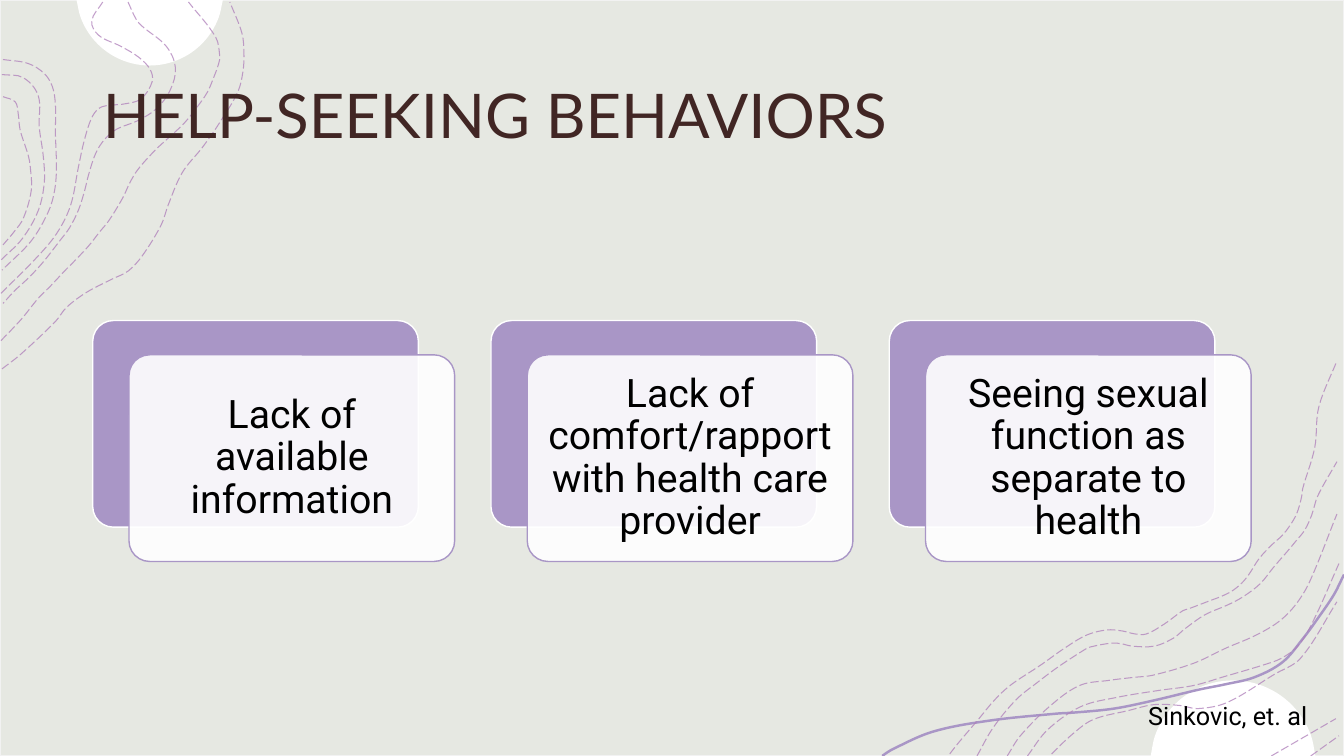
from dataclasses import dataclass
from math import acos, cos, sin

from lxml.etree import SubElement
from pptx import Presentation
from pptx.dml.color import RGBColor
from pptx.enum.dml import MSO_LINE
from pptx.enum.shapes import MSO_SHAPE
from pptx.enum.text import MSO_ANCHOR, PP_ALIGN
from pptx.oxml.ns import qn
from pptx.util import Pt

PX = 9144  # EMU per px, 100 px to the inch
WIDTH, HEIGHT = 1333, 750


@dataclass(frozen=True)
class Theme:
    background: str = "E6E8E2"
    border: str = "F2F2F2"
    white: str = "FFFFFF"
    purple: str = "A996C6"
    contour: str = "AF7FBA"
    heading: str = "412624"
    text: str = "000000"
    heading_font: str = "Lato"
    text_font: str = "Roboto"
    heading_size: int = 44
    card_size: int = 28
    citation_size: int = 18


class SlideBuilder:
    def __init__(self, s, theme):
        self.s = s
        self.theme = theme

    def paint(self, color_format, color, alpha=100):
        """Set a solid colour, with its opacity in percent."""
        color_format.rgb = RGBColor.from_string(color)
        if alpha < 100:
            for clr in color_format._xFill.iter(qn("a:srgbClr")):
                SubElement(clr, qn("a:alpha")).set("val", str(alpha * 1000))

    def style(self, sp, fill=None, line=None, width=1, fill_alpha=100, line_alpha=100):
        sp.shadow.inherit = False
        if fill:
            sp.fill.solid()
            self.paint(sp.fill.fore_color, fill, fill_alpha)
        else:
            sp.fill.background()
        if line:
            sp.line.fill.solid()
            self.paint(sp.line.fill.fore_color, line, line_alpha)
            sp.line.width = Pt(width)
        else:
            sp.line.fill.background()

    def box(self, kind, x, y, w, h, **style):
        sp = self.s.shapes.add_shape(kind, x * PX, y * PX, w * PX, h * PX)
        self.style(sp, **style)
        return sp

    def put_text(self, sp, text, frame, paragraph, font, color):
        tf = sp.text_frame
        p = tf.paragraphs[0]
        r = p.add_run()
        r.text = text
        for target, values in ((tf, frame), (p, paragraph), (r.font, font)):
            for name, value in values.items():
                setattr(target, name, value)
        r.font.color.rgb = RGBColor.from_string(color)

    def curve(self, points, closed=False, **style):
        """Draw a smooth Bezier curve through the points."""
        start, *rest = [(round(x * PX), round(y * PX)) for x, y in points]
        builder = self.s.shapes.build_freeform(*start)
        builder.add_line_segments(rest, close=closed)
        sp = builder.convert_to_shape()
        knots = [complex(int(pt.get("x")), int(pt.get("y")))
                 for pt in sp._element.iter(qn("a:pt"))]
        last = len(knots) - 1
        tangents = []
        for i in range(last + 1):
            step = knots[min(i + 1, last)] - knots[max(i - 1, 0)]
            tangents.append(step / abs(step))
        for i, segment in enumerate(list(sp._element.iter(qn("a:lnTo")))):
            a, b = knots[i], knots[i + 1]
            reach = abs(b - a) / 3
            segment.tag = qn("a:cubicBezTo")
            for child in list(segment):
                segment.remove(child)
            for z in (a + tangents[i] * reach, b - tangents[i + 1] * reach, b):
                pt = SubElement(segment, qn("a:pt"))
                pt.set("x", str(round(z.real)))
                pt.set("y", str(round(z.imag)))
        self.style(sp, **style)
        return sp

    def contour(self, points):
        sp = self.curve(points, line=self.theme.contour, width=0.75, line_alpha=75)
        sp.line.dash_style = MSO_LINE.LONG_DASH

    def cap(self, cx, cy, radius, edge, side):
        """Draw the part of a circle inside the slide edge; side is 1 below it, -1 above."""
        half = acos((edge - cy) * side / radius)
        angles = [half * i / 6 for i in range(-6, 7)]
        self.curve([(cx + radius * sin(a), cy + side * radius * cos(a)) for a in angles],
                   closed=True, fill=self.theme.white)

    def title(self, text, x, y, w, h):
        t, sp = self.theme, self.s.shapes.title
        self.s.shapes._spTree.append(sp._element)  # in front of the decoration
        for name, value in dict(left=x, top=y, width=w, height=h).items():
            setattr(sp, name, value * PX)
        self.put_text(sp, text, dict(vertical_anchor=MSO_ANCHOR.MIDDLE, word_wrap=True),
                      dict(alignment=PP_ALIGN.LEFT),
                      dict(name=t.heading_font, size=Pt(t.heading_size)), t.heading)

    def card(self, text, x, y, w, h):
        t = self.theme
        back = self.box(MSO_SHAPE.ROUNDED_RECTANGLE, x, y, w, h,
                        fill=t.purple, line=t.white)
        front = self.box(MSO_SHAPE.ROUNDED_RECTANGLE, x + 36, y + 34, w, h,
                         fill=t.white, fill_alpha=90, line=t.purple)
        for sp in (back, front):
            sp.adjustments[0] = 0.1
        frame = {f"margin_{side}": 12 * PX for side in ("left", "top", "right", "bottom")}
        frame.update(vertical_anchor=MSO_ANCHOR.MIDDLE, word_wrap=True)
        self.put_text(front, text, frame,
                      dict(alignment=PP_ALIGN.CENTER, line_spacing=0.9),
                      dict(name=t.text_font, size=Pt(t.card_size)), t.text)

    def citation(self, text, x, y, w, h):
        t = self.theme
        sp = self.s.shapes.add_textbox(x * PX, y * PX, w * PX, h * PX)
        self.put_text(sp, text, dict(word_wrap=True), {},
                      dict(name=t.text_font, size=Pt(t.citation_size)), t.text)


RIBBON = [(875, 750), (884, 744), (925, 726), (981, 715), (1048, 708), (1065, 707),
          (1105, 703), (1144, 695), (1190, 684), (1215, 679), (1244, 672), (1272, 657),
          (1292, 634), (1306, 615), (1323, 590), (1333, 570)]

TOP_LEFT_CONTOURS = [
    [(2, 366), (20, 352), (55, 319), (66, 305), (86, 290), (111, 277), (127, 269),
     (141, 254), (160, 223), (167, 203), (181, 171), (201, 146), (219, 120), (236, 91),
     (241, 71), (242, 53), (240, 33), (228, 2)],
    [(1, 338), (21, 317), (38, 296), (50, 284), (64, 269), (73, 260), (88, 244),
     (99, 230), (108, 219), (122, 196), (129, 181), (137, 168), (154, 149), (167, 137),
     (183, 122), (198, 103), (206, 91), (212, 77), (217, 63), (218, 56), (214, 37),
     (187, 2)],
    [(127, 2), (135, 19), (141, 26), (165, 46), (174, 67), (169, 89), (155, 108),
     (136, 120), (116, 128), (104, 138), (95, 152), (88, 173), (84, 189), (78, 208),
     (69, 226), (60, 238), (42, 261), (28, 276), (15, 288), (3, 301)],
    [(1, 291), (35, 257), (56, 232), (70, 204), (78, 165), (84, 138), (92, 115),
     (101, 106), (124, 103), (140, 98), (151, 81), (149, 69), (138, 57), (120, 46),
     (98, 35), (91, 21), (102, 2)],
    [(3, 59), (28, 63), (44, 73), (52, 86), (55, 104), (55, 132), (56, 168), (54, 190),
     (48, 210), (31, 239), (2, 268)],
    [(2, 74), (23, 77), (38, 95), (39, 126), (43, 155), (44, 181), (38, 209), (22, 237),
     (1, 258)],
    [(3, 96), (15, 101), (18, 112), (20, 129), (28, 154), (30, 165), (31, 189),
     (23, 217), (14, 230), (3, 243)],
]

BOTTOM_RIGHT_CONTOURS = [
    [(942, 748), (949, 739), (971, 713), (986, 695), (1002, 680), (1032, 660),
     (1056, 643), (1078, 630), (1098, 625), (1113, 626), (1126, 629), (1137, 629),
     (1155, 619), (1173, 606), (1179, 604), (1200, 596), (1213, 591), (1224, 585),
     (1234, 576), (1240, 568), (1249, 554), (1261, 541), (1272, 531), (1279, 522),
     (1286, 510), (1291, 493), (1292, 485), (1304, 444), (1308, 404), (1326, 358)],
    [(969, 750), (985, 722), (1008, 694), (1029, 677), (1049, 662), (1075, 645),
     (1081, 642), (1103, 638), (1114, 639), (1122, 641), (1145, 641), (1164, 633),
     (1175, 624), (1195, 610), (1218, 600), (1233, 592), (1250, 579), (1263, 563),
     (1276, 548), (1286, 536), (1294, 526), (1301, 511), (1307, 492), (1326, 458)],
    [(1300, 750), (1328, 730)],
    [(1261, 750), (1325, 713)],
    [(1043, 748), (1063, 729), (1084, 714), (1119, 705), (1145, 699), (1171, 700),
     (1188, 703), (1217, 697), (1264, 669), (1290, 653), (1326, 597)],
    [(1019, 750), (1039, 724), (1072, 701), (1107, 692), (1149, 685), (1184, 680),
     (1215, 671), (1252, 660), (1271, 653), (1288, 640), (1303, 615), (1328, 559)],
    [(999, 750), (1012, 730), (1042, 700), (1071, 680), (1100, 675), (1125, 672),
     (1143, 670), (1184, 658), (1216, 643), (1244, 631), (1268, 617), (1285, 600),
     (1299, 577), (1326, 510)],
]

BEHAVIORS = [
    "Lack of available information",
    "Lack of comfort/rapport with health care provider",
    "Seeing sexual function as separate to health",
]


def main():
    prs = Presentation()
    prs.slide_width, prs.slide_height = WIDTH * PX, HEIGHT * PX
    theme = Theme()
    s = SlideBuilder(prs.slides.add_slide(prs.slide_layouts[5]), theme)
    s.box(MSO_SHAPE.RECTANGLE, 0, 0, WIDTH, HEIGHT,
          fill=theme.background, line=theme.border)
    s.cap(148.5, -8, 73, edge=0, side=1)
    s.cap(1223, 757, 82, edge=HEIGHT, side=-1)
    s.curve(RIBBON, line=theme.purple, width=1.75)
    for points in TOP_LEFT_CONTOURS + BOTTOM_RIGHT_CONTOURS:
        s.contour(points)
    s.title("HELP-SEEKING BEHAVIORS", 92, 40, 1150, 145)
    for i, behavior in enumerate(BEHAVIORS):
        s.card(behavior, 92 + 395 * i, 318, 323, 205)
    s.citation("Sinkovic, et. al", 1129, 690, 204, 40)
    prs.save("out.pptx")


if __name__ == "__main__":
    main()
